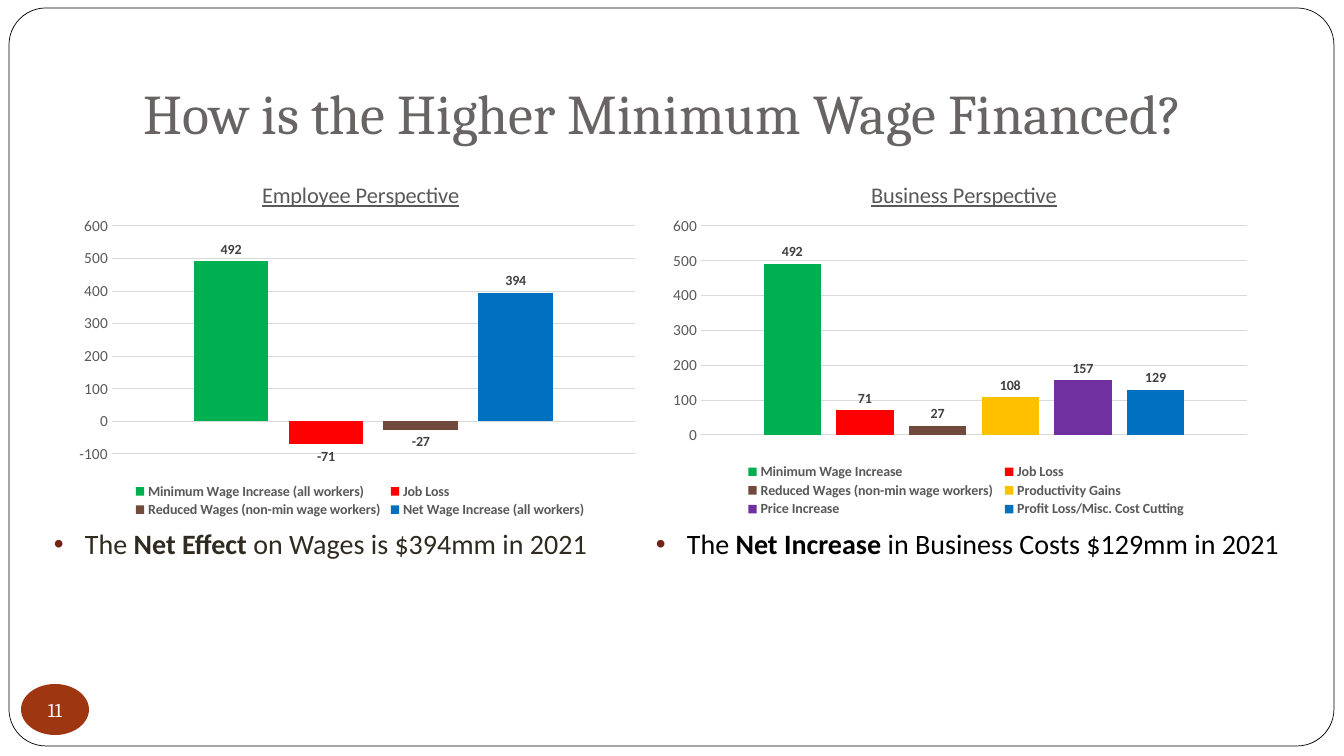
from lxml.etree import SubElement
from pptx import Presentation
from pptx.chart.data import CategoryChartData
from pptx.dml.color import RGBColor
from pptx.enum.chart import XL_CHART_TYPE as ChartType, XL_LEGEND_POSITION as LegendPos
from pptx.enum.chart import XL_LABEL_POSITION as LabelPos, XL_TICK_MARK as TickMark
from pptx.enum.shapes import MSO_SHAPE as Preset
from pptx.enum.text import MSO_ANCHOR as Anchor, PP_ALIGN as Align
from pptx.oxml.ns import qn
from pptx.util import Pt

COLORS = {
    "white": "FFFFFF", "black": "000000", "title": "696464", "bullet": "742217",
    "olive": "2F2B20", "badge": "9E3611", "axis": "595959", "grid": "D9D9D9",
    "label": "404040", "green": "00B050", "red": "FF0000", "brown": "704A3D",
    "gold": "FFC000", "purple": "7030A0", "blue": "0070C0",
}
BODY, HEADING = "Calibri", "Cambria"
TITLE = "How is the Higher Minimum Wage Financed?"
PAGE = "11"
PERSPECTIVES = [
    {
        "title": "Business Perspective",
        "frame": (661, 156, 599, 366), "plot": (701, 226, 546, 209),
        "heading": (867, 176), "legend": (741, 461, 450, 59), "low": 0,
        "series": [
            ("Minimum Wage Increase", 492, "green"),
            ("Job Loss", 71, "red"),
            ("Reduced Wages (non-min wage workers)", 27, "brown"),
            ("Productivity Gains", 108, "gold"),
            ("Price Increase", 157, "purple"),
            ("Profit Loss/Misc. Cost Cutting", 129, "blue"),
        ],
    },
    {
        "title": "Employee Perspective",
        "frame": (67, 156, 580, 366), "plot": (112, 226, 523, 228),
        "heading": (258, 176), "legend": (130, 481, 460, 39), "low": -100,
        "series": [
            ("Minimum Wage Increase (all workers)", 492, "green"),
            ("Job Loss", -71, "red"),
            ("Reduced Wages (non-min wage workers)", -27, "brown"),
            ("Net Wage Increase (all workers)", 394, "blue"),
        ],
    },
]
FINDINGS = [
    ((44, 522, 570, 44), "olive",
     [("The ", False), ("Net Effect", True), (" on Wages is $394mm in 2021", False)]),
    ((646, 522, 648, 44), "black",
     [("The ", False), ("Net Increase", True), (" in Business Costs $129mm in 2021", False)]),
]
EMU_PER_PX = 914400 / 100.8


def px(*lengths):
    return [round(length * EMU_PER_PX) for length in lengths]


def rgb(name):
    return RGBColor.from_string(COLORS[name])


def style(font, size, color, face=BODY, bold=False):
    font.size, font.name, font.bold = Pt(size), face, bold
    font.color.rgb = rgb(color)


def write(paragraph, text, *look, **extra):
    run = paragraph.add_run()
    run.text = text
    style(run.font, *look, **extra)
    return run


def add_bullet(paragraph):
    props = paragraph._p.get_or_add_pPr()
    indent = px(31)[0]
    props.set("marL", str(indent))
    props.set("indent", str(-indent))
    color = SubElement(props, qn("a:buClr"))
    SubElement(color, qn("a:srgbClr"), val=COLORS["bullet"])
    SubElement(props, qn("a:buFont"), typeface="Arial")
    SubElement(props, qn("a:buChar"), char="•")


def place(part, area, frame, inner=False):
    for old in part.findall(qn("c:layout")):
        part.remove(old)
    layout = SubElement(part, qn("c:layout"))
    overlay = part.find(qn("c:overlay"))
    if overlay is None:
        part.insert(0, layout)
    else:
        overlay.addprevious(layout)
    manual = SubElement(layout, qn("c:manualLayout"))
    if inner:
        SubElement(manual, qn("c:layoutTarget"), val="inner")
    for side in "xy":
        SubElement(manual, qn(f"c:{side}Mode"), val="edge")
    left, top, width, height = frame
    shares = [(area[0] - left) / width, (area[1] - top) / height]
    shares += [length / whole for length, whole in zip(area[2:], (width, height))]
    for key, share in zip("xywh", shares):
        SubElement(manual, qn(f"c:{key}"), val=f"{share:.4f}")


def add_perspective(slide, view):
    data = CategoryChartData()
    data.categories = ["1"]
    for name, value, _ in view["series"]:
        data.add_series(name, [value])
    frame = view["frame"]
    chart = slide.shapes.add_chart(ChartType.COLUMN_CLUSTERED, *px(*frame), data).chart
    style(chart.font, 10, "black")

    heading = chart.chart_title
    heading.include_in_layout = False
    run = write(heading.text_frame.paragraphs[0], view["title"], 16, "axis")
    run.font.underline = True
    place(heading._element, view["heading"], frame)

    chart.has_legend = True
    legend = chart.legend
    legend.position, legend.include_in_layout = LegendPos.BOTTOM, False
    style(legend.font, 10, "axis", bold=True)
    place(legend._element, view["legend"], frame)

    chart.category_axis.visible = False
    dollars = chart.value_axis
    dollars.minimum_scale, dollars.maximum_scale, dollars.major_unit = view["low"], 600, 100
    dollars.major_tick_mark = dollars.minor_tick_mark = TickMark.NONE
    dollars.format.line.fill.background()
    dollars.major_gridlines.format.line.color.rgb = rgb("grid")
    dollars.major_gridlines.format.line.width = Pt(0.75)
    style(dollars.tick_labels.font, 11, "axis")

    bars = chart.plots[0]
    bars.gap_width, bars.overlap, bars.vary_by_categories = 219, -27, False
    for series, (_, _, color) in zip(bars.series, view["series"]):
        series.invert_if_negative = False
        series.format.fill.solid()
        series.format.fill.fore_color.rgb = rgb(color)
        labels = series.data_labels
        labels.show_value, labels.position = True, LabelPos.OUTSIDE_END
        style(labels.font, 10, "label", bold=True)
    place(chart._chartSpace.chart.plotArea, view["plot"], frame, inner=True)


def add_panel(slide, preset, area, fill):
    panel = slide.shapes.add_shape(preset, *px(*area))
    panel.shadow.inherit = False
    panel.fill.solid()
    panel.fill.fore_color.rgb = rgb(fill)
    return panel


def main():
    deck = Presentation()
    deck.slide_width, deck.slide_height = px(1344, 756)
    slide = deck.slides.add_slide(deck.slide_layouts[6])

    border = add_panel(slide, Preset.ROUNDED_RECTANGLE, (9, 8, 1325, 738), "white")
    border.adjustments[0] = 0.05
    border.line.color.rgb = rgb("black")
    border.line.width = Pt(0.5)

    title = slide.shapes.add_textbox(*px(134, 30, 1142, 126)).text_frame
    title.word_wrap, title.vertical_anchor = True, Anchor.BOTTOM
    title.margin_bottom = px(10)[0]
    write(title.paragraphs[0], TITLE, 40, "title", face=HEADING)

    for area, color, runs in FINDINGS:
        finding = slide.shapes.add_textbox(*px(*area)).text_frame
        finding.word_wrap = True
        add_bullet(finding.paragraphs[0])
        for text, bold in runs:
            write(finding.paragraphs[0], text, 20, color, bold=bold)

    badge = add_panel(slide, Preset.OVAL, (21, 684, 68, 51), "badge")
    badge.line.fill.background()
    number = badge.text_frame
    number.margin_left = number.margin_right = number.margin_top = number.margin_bottom = 0
    number.word_wrap, number.vertical_anchor = False, Anchor.MIDDLE
    number.paragraphs[0].alignment = Align.CENTER
    write(number.paragraphs[0], PAGE, 14, "white", face=HEADING)

    for view in PERSPECTIVES:
        add_perspective(slide, view)
    deck.save("out.pptx")


if __name__ == "__main__":
    main()
